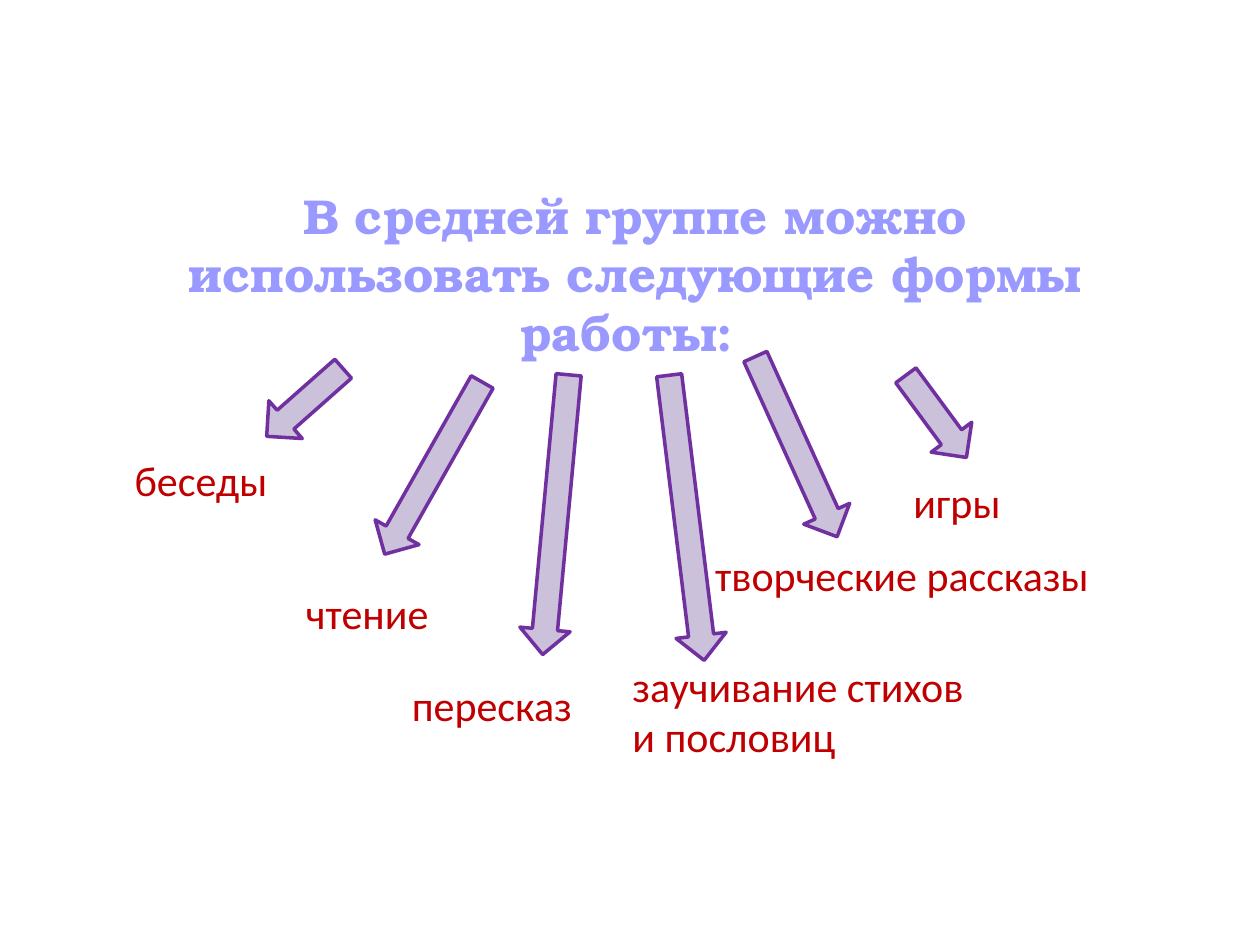
from dataclasses import dataclass

from pptx import Presentation
from pptx import util as u
from pptx.dml.color import RGBColor
from pptx.enum import shapes, text

# Square grid: 100 columns by 75 rows over the whole slide
SLIDE_W, SLIDE_H = u.Inches(10), u.Inches(7.5)
COLUMNS = 100
CELL = SLIDE_W / COLUMNS


@dataclass(frozen=True)
class Theme:
    heading_font: str = "TeX Gyre Bonum"
    heading_size: int = 28
    heading_color: str = "9999FF"
    label_font: str = "Calibri"
    label_size: int = 24
    label_color: str = "C00000"
    arrow_fill: str = "CCC1DA"
    arrow_line: str = "7030A0"
    arrow_line_width: int = 2
    arrow_width: int = 4  # columns


THEME = Theme()
LEFT, CENTER = text.PP_ALIGN.LEFT, text.PP_ALIGN.CENTER

HEADING = "В средней группе можно использовать следующие формы работы: "

# Per form of work: arrow (column, row, length, rotation),
# label (column, row, width, height), wording, wrap, alignment
FORMS = [
    ((13.2, 0.9, 8.1, 48.5), (0.7, 8.6, 14.6, 5), "беседы", False, LEFT),
    ((23.4, 2.3, 15.7, 29.5), (14.3, 19.1, 13.1, 5), "чтение", False, LEFT),
    ((33.1, 2.7, 22.3, 5.3), (22.7, 26.4, 22.6, 5), "пересказ", True, LEFT),
    ((43.5, 2.7, 22.8, 353), (40.2, 24.9, 29.1, 13.1),
     "заучивание стихов и пословиц", True, LEFT),
    ((52.2, 0.6, 15.7, 335.6), (43.8, 16.1, 37.6, 9.1),
     "творческие рассказы", True, CENTER),
    ((63.3, 2, 8.1, 323.6), (62.5, 10.3, 10.5, 5), "игры", False, LEFT),
]


def cells(*counts):
    return [u.Emu(round(count * CELL)) for count in counts]


def add_words(slide, box, wording, font, size, color,
              bold=False, wrap=True, align=LEFT):
    words = slide.shapes.add_textbox(*cells(*box))
    frame = words.text_frame
    frame.text = wording
    frame.word_wrap = wrap
    frame.auto_size = text.MSO_AUTO_SIZE.SHAPE_TO_FIT_TEXT
    line = frame.paragraphs[0]
    line.alignment = align
    run_font = line.runs[0].font
    run_font.name, run_font.size, run_font.bold = font, u.Pt(size), bold
    run_font.color.rgb = RGBColor.from_string(color)


def add_arrow(slide, column, row, length, rotation):
    arrow = slide.shapes.add_shape(
        shapes.MSO_SHAPE.DOWN_ARROW,
        *cells(column, row, THEME.arrow_width, length))
    arrow.rotation = rotation
    arrow.shadow.inherit = False
    arrow.fill.solid()
    arrow.fill.fore_color.rgb = RGBColor.from_string(THEME.arrow_fill)
    arrow.line.color.rgb = RGBColor.from_string(THEME.arrow_line)
    arrow.line.width = u.Pt(THEME.arrow_line_width)


def heading(slide, box):
    add_words(slide, box, HEADING, THEME.heading_font, THEME.heading_size,
              THEME.heading_color, bold=True, align=CENTER)


def fan_of_forms(slide, left, top):
    """Arrows spreading from the heading, each ending at a form of work."""
    for arrow, label, wording, wrap, align in FORMS:
        column, row, length, rotation = arrow
        add_arrow(slide, left + column, top + row, length, rotation)
        column, row, width, height = label
        add_words(slide, (left + column, top + row, width, height), wording,
                  THEME.label_font, THEME.label_size, THEME.label_color,
                  wrap=wrap, align=align)


def main():
    deck = Presentation()
    deck.slide_width, deck.slide_height = SLIDE_W, SLIDE_H
    slide = deck.slides.add_slide(deck.slide_layouts[6])
    heading(slide, (13.7, 14.2, 73.4, 15.1))
    fan_of_forms(slide, left=9, top=27)
    deck.save("out.pptx")


if __name__ == "__main__":
    main()
